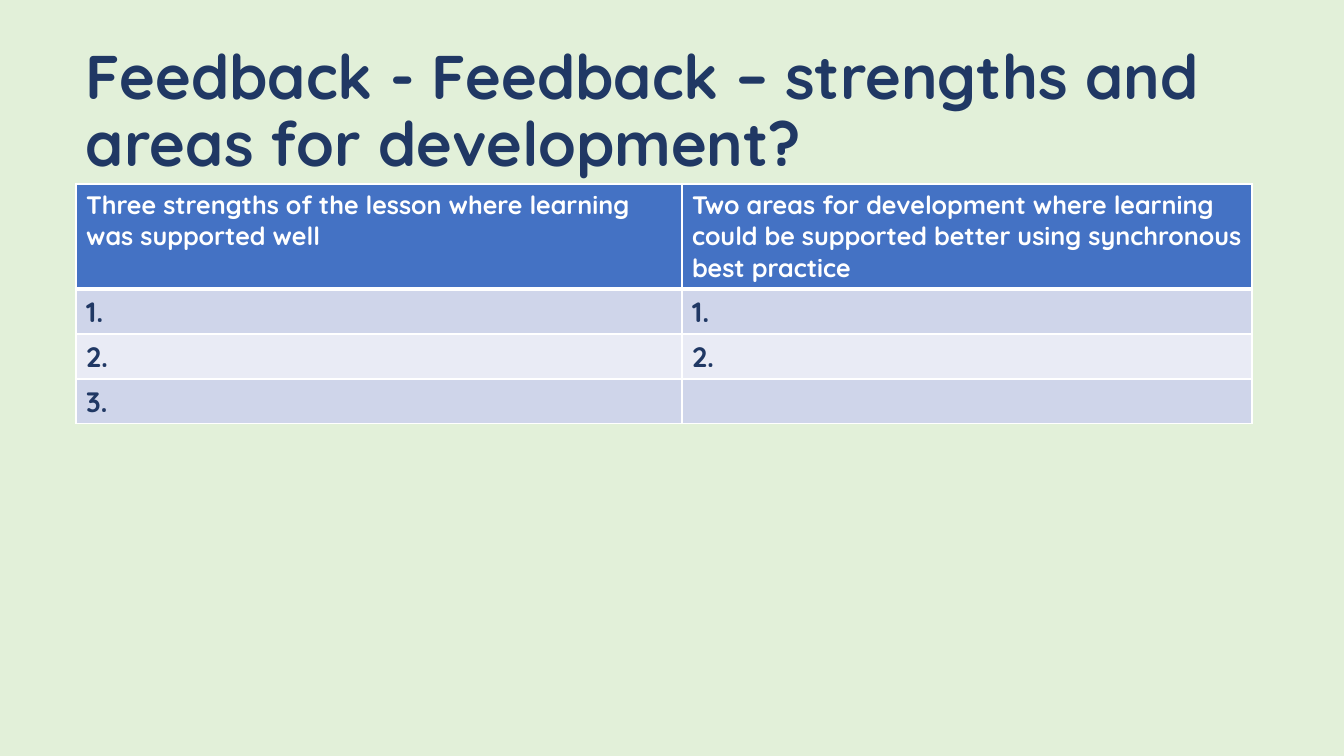
from lxml.etree import SubElement
from pptx import Presentation
from pptx.dml.color import RGBColor
from pptx.enum.text import MSO_ANCHOR
from pptx.oxml.ns import qn
from pptx.util import Pt

EMU_PER_PX = 12192000 / 1344

MINT = RGBColor(0xE2, 0xF0, 0xD9)
NAVY = RGBColor(0x20, 0x38, 0x64)
BLUE = RGBColor(0x44, 0x72, 0xC4)
BAND_DARK = RGBColor(0xCF, 0xD5, 0xEA)
BAND_LIGHT = RGBColor(0xE9, 0xEB, 0xF5)
WHITE = RGBColor(0xFF, 0xFF, 0xFF)

FEEDBACK = [
    ("Three strengths of the lesson where learning was supported well",
     "Two areas for development where learning could be supported better "
     "using synchronous best practice"),
    ("1.", "1."),
    ("2.", "2."),
    ("3.", ""),
]


def px(length):
    return round(length * EMU_PER_PX)


class SlideBuilder:
    font_name = "Quicksand"

    def __init__(self, presentation, background):
        self.slide = presentation.slides.add_slide(presentation.slide_layouts[6])
        fill = self.slide.background.fill
        fill.solid()
        fill.fore_color.rgb = background

    def style(self, paragraph, size, color):
        font = paragraph.font
        font.name, font.size, font.bold = self.font_name, Pt(size), True
        font.color.rgb = color

    def title(self, text, left, top, width, height):
        frame = self.slide.shapes.add_textbox(
            px(left), px(top), px(width), px(height)).text_frame
        frame.word_wrap = True
        frame.vertical_anchor = MSO_ANCHOR.MIDDLE
        heading = frame.paragraphs[0]
        heading.text = text
        heading.line_spacing = 0.9
        self.style(heading, 44, NAVY)

    def borders(self, cell, bottom):
        properties = cell._tc.get_or_add_tcPr()
        for side, points in (("L", 1), ("R", 1), ("T", 1), ("B", bottom)):
            line = SubElement(properties, qn(f"a:ln{side}"), w=str(Pt(points)))
            solid = SubElement(line, qn("a:solidFill"))
            SubElement(solid, qn("a:srgbClr"), val=str(WHITE))

    def table(self, rows, left, top, widths, heights):
        table = self.slide.shapes.add_table(
            len(rows), len(widths), px(left), px(top),
            px(sum(widths)), px(sum(heights))).table
        for column, width in zip(table.columns, widths):
            column.width = px(width)
        for r, (texts, height) in enumerate(zip(rows, heights)):
            table.rows[r].height = px(height)
            header = r == 0
            band = BLUE if header else (BAND_DARK if r % 2 else BAND_LIGHT)
            for c, text in enumerate(texts):
                cell = table.cell(r, c)
                cell.text = text
                self.style(cell.text_frame.paragraphs[0],
                           18 if header else 20, WHITE if header else NAVY)
                self.borders(cell, bottom=3 if header else 1)
                cell.fill.solid()
                cell.fill.fore_color.rgb = band


def main():
    presentation = Presentation()
    presentation.slide_width, presentation.slide_height = px(1344), px(756)
    builder = SlideBuilder(presentation, MINT)

    # Heading
    builder.title("Feedback - Feedback – strengths and areas for development?",
                  76, 40, 1176, 146)

    # Strengths beside areas for development
    builder.table(FEEDBACK, 76, 184, widths=[606, 570], heights=[105, 45, 45, 45])

    presentation.save("out.pptx")


if __name__ == "__main__":
    main()
